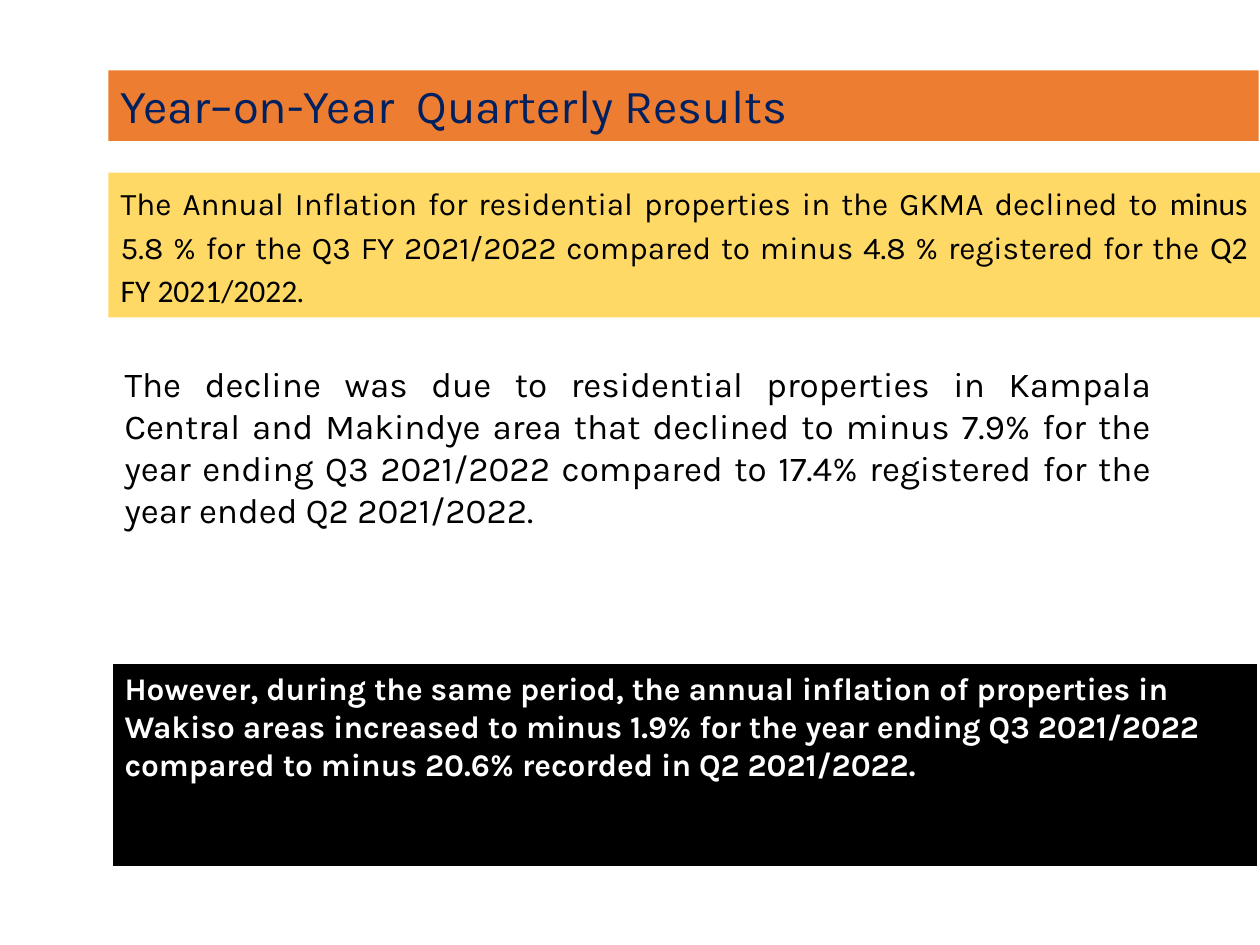
"""Build the slide on year-on-year quarterly results."""
from pptx import Presentation
from pptx import util as u
from pptx.dml.color import RGBColor
from pptx.enum import shapes, text

ORANGE = RGBColor(0xED, 0x7D, 0x31)
GOLD = RGBColor(0xFF, 0xD9, 0x66)
NAVY = RGBColor(0x00, 0x20, 0x60)
BLACK = RGBColor(0, 0, 0)
WHITE = RGBColor(0xFF, 0xFF, 0xFF)
HEAD, BODY = "Karla", "Calibri"

TITLE = [("Year–on-Year  Quarterly Results", HEAD)]
TREND = [
    ("The Annual Inflation for residential properties in the GKMA declined to ", HEAD),
    ("minus ", BODY),
    ("5.8 % for the Q3 FY 2021/2022 compared to minus 4.8 % registered for the ", HEAD),
    ("Q2 FY 2021/2022", BODY),
    (".", HEAD),
]
CAUSE = [(
    "The decline was due to residential properties in Kampala Central and "
    "Makindye area that declined to minus 7.9% for the year ending Q3 2021/2022 "
    "compared to 17.4% registered for the year ended Q2 2021/2022.", HEAD)]
RISE = [(
    "However, during the same period, the annual inflation of properties in "
    "Wakiso areas increased to minus 1.9% for the year ending Q3 2021/2022 "
    "compared to minus 20.6% recorded in Q2 2021/2022.", HEAD)]


def write(shape, runs, size, color, bold=False, align=text.PP_ALIGN.LEFT):
    """Fill a shape with one paragraph of runs and return the paragraph."""
    frame = shape.text_frame
    frame.word_wrap = True
    frame.vertical_anchor = text.MSO_ANCHOR.TOP
    para = frame.paragraphs[0]
    para.alignment = align
    for words, face in runs:
        run = para.add_run()
        run.text = words
        font = run.font
        font.name, font.size, font.bold = face, u.Pt(size), bold
        font.color.rgb = color
    return para


def band(slide, box, fill, line=None):
    """Add a filled rectangle with an optional outline."""
    shape = slide.shapes.add_shape(
        shapes.MSO_SHAPE.RECTANGLE, *map(u.Inches, box))
    shape.shadow.inherit = False
    shape.fill.solid()
    shape.fill.fore_color.rgb = fill
    if line is None:
        shape.line.fill.background()
    else:
        shape.line.color.rgb = line
        shape.line.width = u.Pt(1.5)
    return shape


def main():
    """Lay out the slide and save it."""
    deck = Presentation()
    deck.slide_width, deck.slide_height = u.Inches(10), u.Inches(7.5)
    slide = deck.slides.add_slide(deck.slide_layouts[6])
    both = text.PP_ALIGN.JUSTIFY

    write(band(slide, (0.86, 0.56, 9.13, 0.56), ORANGE), TITLE, 27, NAVY)

    trend = band(slide, (0.86, 1.37, 9.14, 1.15), GOLD)
    para = write(trend, TREND, 18, BLACK, align=both)
    para.line_spacing = 1.15
    para.space_before, para.space_after = u.Pt(3.8), u.Pt(7.5)

    rise = band(slide, (0.89, 5.26, 9.1, 1.62), BLACK, WHITE)
    write(rise, RISE, 18, WHITE, bold=True)

    cause = slide.shapes.add_textbox(*map(u.Inches, (0.89, 2.83, 8.35, 1.78)))
    write(cause, CAUSE, 20, BLACK, align=both)

    deck.save("out.pptx")


if __name__ == "__main__":
    main()
